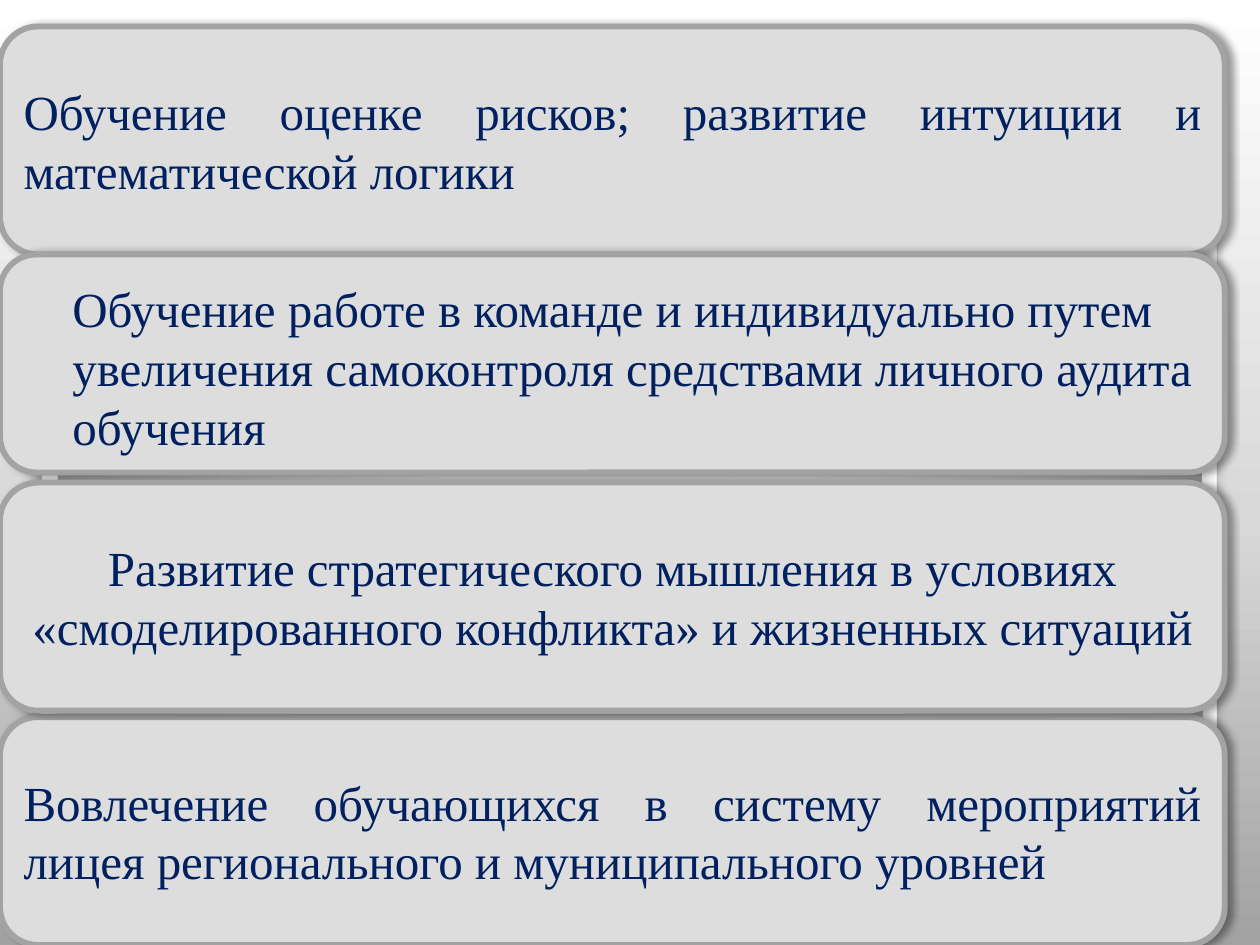
from dataclasses import dataclass

from lxml import etree
from pptx import Presentation
from pptx import util as u
from pptx.dml.color import RGBColor
from pptx.enum import shapes, text
from pptx.oxml.ns import qn

ALIGN = text.PP_ALIGN


@dataclass(frozen=True)
class Theme:
    font: str = "Times New Roman"
    size: float = 28
    ink: str = "002060"
    card: str = "DDDDDD"
    border: str = "A3A3A3"
    border_width: float = 3.35
    sheet_border: str = "A4A4A4"
    shadow: str = "000000"
    backdrop: tuple = ((0, "A2A2A2"), (45, "D8D8D8"), (100, "FFFFFF"))
    sheet: tuple = ((0, "FFFFFF"), (98, "FFFFFF"), (99, "F7F7F7"), (100, "DADADA"))
    glow: tuple = ((0, "FFFFFF"), (55, "E1E1E1"), (100, "A2A2A2"))


def sub(parent, tag, **attrs):
    return etree.SubElement(parent, qn(tag), {k: str(v) for k, v in attrs.items()})


def set_gradient(fill, element, stops, angle=None, focus=None):
    """Linear gradient (clockwise angle), or circular one around a focus rectangle."""
    fill.gradient()
    grad = element.find(".//" + qn("a:gradFill"))
    for child in list(grad):
        grad.remove(child)
    stop_list = sub(grad, "a:gsLst")
    for pos, color in stops:
        sub(sub(stop_list, "a:gs", pos=pos * 1000), "a:srgbClr", val=color)
    if focus:
        circle = sub(grad, "a:path", path="circle")
        sub(circle, "a:fillToRect", **{side: v * 1000 for side, v in zip("ltrb", focus)})
    else:
        sub(grad, "a:lin", ang=angle * 60000, scaled=0)


def set_shadow(sp, color, alpha, blur, dist, angle):
    effects = sp._element.spPr.find(qn("a:effectLst"))
    outer = sub(effects, "a:outerShdw", blurRad=u.Pt(blur), dist=u.Pt(dist),
                dir=angle * 60000, algn="ctr", rotWithShape=0)
    sub(sub(outer, "a:srgbClr", val=color), "a:alpha", val=alpha * 1000)


def write_text(tf, words, *, theme, align=ALIGN.LEFT, indent=0, before=0):
    tf.word_wrap = True
    tf.vertical_anchor = text.MSO_ANCHOR.MIDDLE
    p = tf.paragraphs[0]
    p.alignment = align
    p.space_before = u.Pt(before)
    if indent:
        p._p.get_or_add_pPr().set("marL", str(u.Inches(indent)))
    r = p.add_run()
    r.text = words
    r.font.name = theme.font
    r.font.size = u.Pt(theme.size)
    r.font.color.rgb = RGBColor.from_string(theme.ink)


class SlideBuilder:
    def __init__(self, slide, theme):
        self.slide, self.theme = slide, theme

    def backdrop(self):
        set_gradient(self.slide.background.fill, self.slide._element,
                     self.theme.backdrop, angle=270)

    def rounded(self, left, top, width, height):
        sp = self.slide.shapes.add_shape(
            shapes.MSO_SHAPE.ROUNDED_RECTANGLE,
            *(u.Inches(v) for v in (left, top, width, height)))
        sp.shadow.inherit = False
        return sp

    def border(self, sp, color, width):
        sp.line.color.rgb = RGBColor.from_string(color)
        sp.line.width = u.Pt(width)

    def panel(self, box, stops, **gradient):
        sp = self.rounded(*box)
        sp.adjustments[0] = 0.021
        set_gradient(sp.fill, sp._element, stops, **gradient)
        sp.line.fill.background()
        return sp

    def card(self, top, height, words, margins=None, **fmt):
        sp = self.rounded(0, top, 9.72, height)
        sp.fill.solid()
        sp.fill.fore_color.rgb = RGBColor.from_string(self.theme.card)
        self.border(sp, self.theme.border, self.theme.border_width)
        set_shadow(sp, self.theme.shadow, alpha=40, blur=4, dist=3, angle=0)
        tf = sp.text_frame
        if margins:
            tf.margin_left, tf.margin_top, tf.margin_right, tf.margin_bottom = (
                u.Inches(m) for m in margins)
        write_text(tf, words, theme=self.theme, **fmt)


def main():
    prs = Presentation()
    prs.slide_width, prs.slide_height = u.Inches(10), u.Inches(7.5)
    theme = Theme()
    s = SlideBuilder(prs.slides.add_slide(prs.slide_layouts[6]), theme)

    s.backdrop()
    sheet = s.panel((0.33, 0.36, 9.33, 6.78), theme.sheet, angle=90)
    s.border(sheet, theme.sheet_border, 0.16)
    set_shadow(sheet, theme.shadow, alpha=25, blur=6, dist=4, angle=90)
    s.panel((0.46, 0.47, 9.08, 6), theme.glow, focus=(50, 175, 50, -75))

    s.card(0.21, 1.81, "Обучение оценке рисков; развитие интуиции и математической логики",
           align=ALIGN.JUSTIFY)
    s.card(2.02, 1.73, "Обучение работе в команде и индивидуально путем увеличения "
           "самоконтроля средствами личного аудита обучения",
           margins=(0.2, 0.1, 0.1, 0.05), indent=0.29, before=2.5)
    s.card(5.69, 1.81, "Вовлечение обучающихся в систему мероприятий лицея "
           "регионального и муниципального уровней", align=ALIGN.JUSTIFY)
    s.card(3.83, 1.81, "Развитие стратегического мышления в условиях "
           "«смоделированного конфликта» и жизненных ситуаций", align=ALIGN.CENTER)

    prs.save("out.pptx")


if __name__ == "__main__":
    main()
